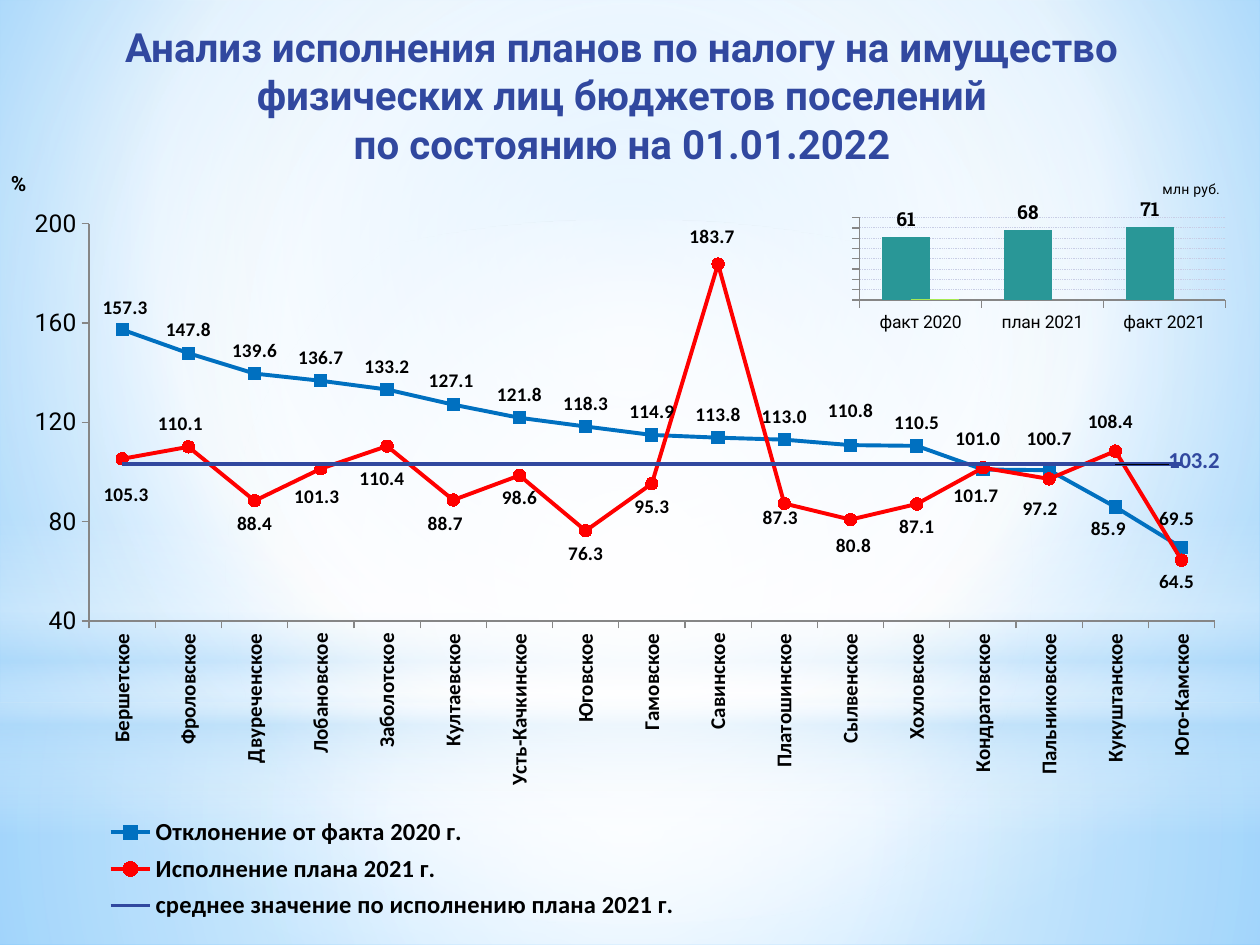
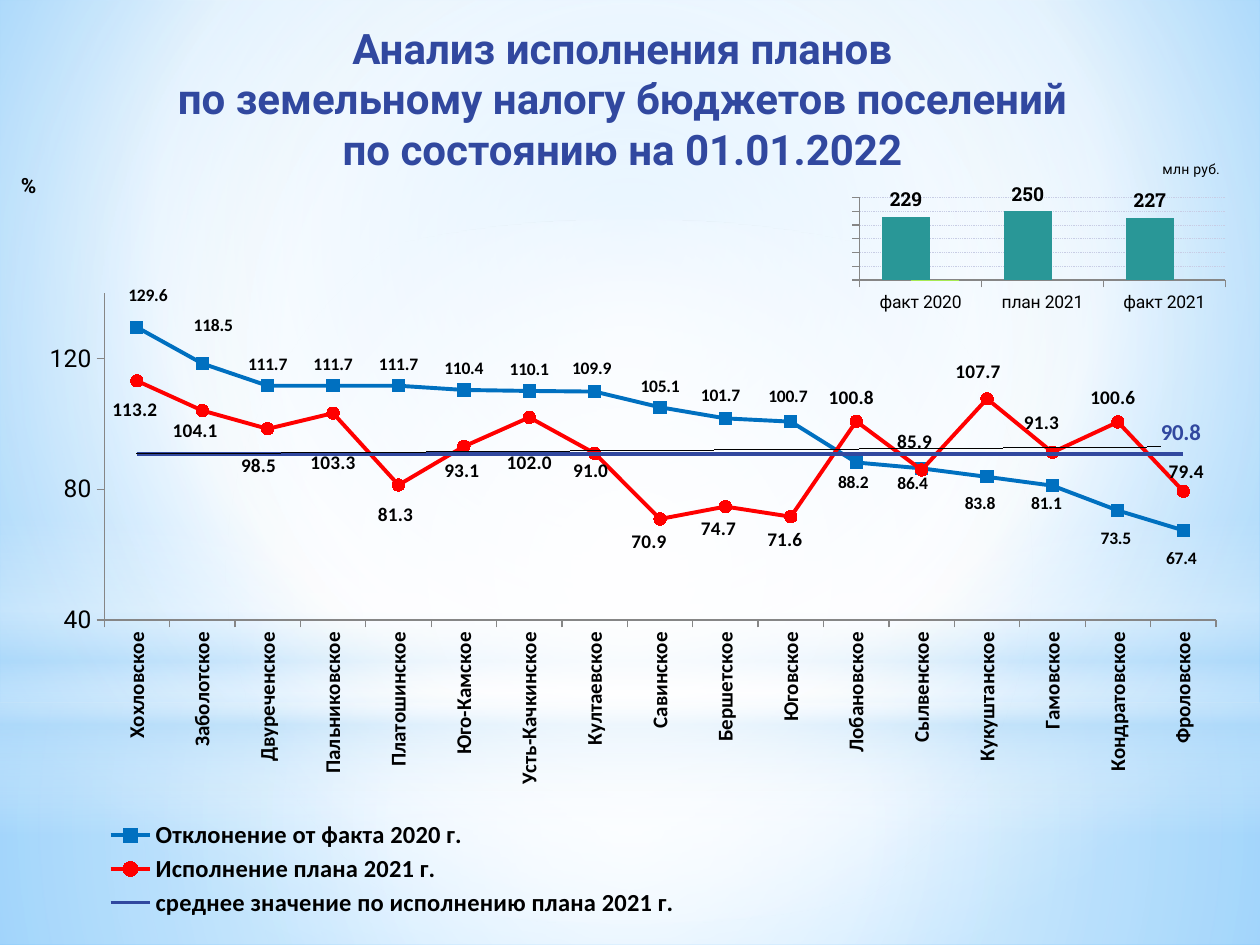
from pptx import Presentation
from pptx.chart.data import CategoryChartData
from pptx.dml.color import RGBColor
from pptx.enum.chart import XL_CHART_TYPE as CHART, XL_LABEL_POSITION as LABEL
from pptx.enum.chart import XL_LEGEND_POSITION as LEGEND, XL_MARKER_STYLE as MARKER
from pptx.enum.chart import XL_TICK_LABEL_POSITION as TICK_LABELS, XL_TICK_MARK as TICK
from pptx.enum.dml import MSO_LINE
from pptx.enum.shapes import MSO_SHAPE as SHAPE
from pptx.enum.text import MSO_ANCHOR, MSO_AUTO_SIZE, PP_ALIGN
from pptx.oxml import parse_xml
from pptx.oxml.ns import nsdecls, qn
from pptx.util import Pt

EMU_PER_PX = 914400 / 126
SLIDE_W, SLIDE_H = 1260, 945

BLACK = RGBColor(0x00, 0x00, 0x00)
WHITE = RGBColor(0xFF, 0xFF, 0xFF)
INDIGO = RGBColor(0x31, 0x48, 0x9F)
BLUE = RGBColor(0x00, 0x70, 0xC0)
RED = RGBColor(0xFF, 0x00, 0x00)
DARK_RED = RGBColor(0xC0, 0x00, 0x00)
TEAL = RGBColor(0x29, 0x97, 0x97)
LIME = RGBColor(0xA7, 0xEA, 0x52)
GRID = RGBColor(0xC8, 0xCD, 0xE5)
AXIS_GREY = RGBColor(0x86, 0x86, 0x86)
SKY = RGBColor(0xB4, 0xDC, 0xFA)
BG_INNER = RGBColor(0x9E, 0xD5, 0xFF)
BG_OUTER = RGBColor(0x5B, 0xB9, 0xFF)

HEAD_FONT, LABEL_FONT, FIGURE_FONT = "Roboto", "Calibri", "Roboto Slab"

DEVIATION = "Отклонение от факта 2020 г."
EXECUTION = "Исполнение плана 2021 г."
AVERAGE = "среднее значение по исполнению плана 2021 г."

# Label shifts are px from the default place: {point: (right, down)}
PROPERTY_TAX = dict(
    title="Анализ исполнения планов по налогу на имущество\vфизических лиц бюджетов поселений"
          "\vпо состоянию на 01.01.2022",
    title_size=23, title_height=123, frame=(0, 79, 1255, 866), scale_max=200,
    plot=(0.071, 0.167, 0.897, 0.459), percent_at=(7, 86), legend=(100, 732, 585, 116),
    settlements=["Бершетское", "Фроловское", "Двуреченское", "Лобановское", "Заболотское",
                 "Култаевское", "Усть-Качкинское", "Юговское", "Гамовское", "Савинское",
                 "Платошинское", "Сылвенское", "Хохловское", "Кондратовское",
                 "Пальниковское", "Кукуштанское", "Юго-Камское"],
    deviation=[157.3, 147.8, 139.6, 136.7, 133.2, 127.1, 121.8, 118.3, 114.9, 113.8, 113,
               110.8, 110.5, 101, 100.7, 85.9, 69.5],
    execution=[105.3, 110.1, 88.4, 101.3, 110.4, 88.7, 98.6, 76.3, 95.3, 183.7, 87.3,
               80.8, 87.1, 101.7, 97.2, 108.4, 64.5],
    average=103.2, deviation_size=11, execution_marker=RED,
    deviation_shifts={0: (3, 1), 5: (-2, -1), 11: (0, -11), 13: (-5, -8), 14: (0, -8),
                      15: (-7, 45), 16: (-5, -6)},
    execution_shifts={0: (4, 13), 1: (-8, -46), 3: (-4, 5), 4: (-5, 10), 5: (-8, 1),
                      9: (-6, -50), 10: (-4, -8), 11: (3, 3), 13: (-7, 5), 14: (-9, 7),
                      15: (-5, -52), 16: (-5, -1)},
    average_shifts={15: (48, -3)},
    totals=[61, 68, 71], totals_top=155, totals_max=80, totals_step=10)

LAND_TAX = dict(
    title="Анализ исполнения планов\vпо земельному налогу бюджетов поселений"
          "\vпо состоянию на 01.01.2022",
    title_size=24, title_height=169, frame=(5, 111, 1255, 829), scale_max=140,
    plot=(0.079, 0.22, 0.886, 0.394), percent_at=(12, 56), legend=(95, 706, 585, 104),
    settlements=["Хохловское", "Заболотское", "Двуреченское", "Пальниковское",
                 "Платошинское", "Юго-Камское", "Усть-Качкинское", "Култаевское",
                 "Савинское", "Бершетское", "Юговское", "Лобановское", "Сылвенское",
                 "Кукуштанское", "Гамовское", "Кондратовское", "Фроловское"],
    deviation=[129.6, 118.5, 111.7, 111.7, 111.7, 110.4, 110.1, 109.9, 105.1, 101.7, 100.7,
               88.2, 86.4, 83.8, 81.1, 73.5, 67.4],
    execution=[113.2, 104.1, 98.5, 103.3, 81.3, 93.1, 102, 91, 70.9, 74.7, 71.6, 100.8,
               85.9, 107.7, 91.3, 100.6, 79.4],
    average=90.8, deviation_size=10, execution_marker=DARK_RED,
    deviation_shifts={0: (11, -11), 1: (11, -17), 7: (-3, -2), 9: (-5, -2), 10: (-3, -4),
                      11: (-3, 41), 12: (-9, 36), 13: (-7, 48), 14: (-6, 39),
                      15: (-2, 49), 16: (-2, 49)},
    execution_shifts={0: (-2, 6), 1: (-7, -3), 2: (-9, 14), 3: (0, 27), 4: (-3, 7),
                      5: (-2, 2), 6: (0, 23), 7: (-4, -5), 8: (-11, 0), 9: (-7, -1),
                      10: (-6, 0), 11: (-5, -46), 12: (-7, -51), 13: (-9, -50),
                      14: (-11, -52), 15: (-5, -47), 16: (3, -42)},
    average_shifts={0: (1019, -21)},
    totals=[229, 250, 227], totals_top=135, totals_max=300, totals_step=50)


def px(length):
    return round(length * EMU_PER_PX)


def box(*lengths):
    return [px(length) for length in lengths]


# Text
def format_font(font, size, name=HEAD_FONT, bold=False, color=BLACK):
    font.size, font.name, font.bold = Pt(size), name, bold
    font.color.rgb = color


def write(frame, text, align=PP_ALIGN.CENTER, **font):
    frame.text = text
    paragraph = frame.paragraphs[0]
    paragraph.alignment = align
    for run in paragraph.runs:
        format_font(run.font, **font)


# Shared background
def gradient(stops, focus=None):
    """Stops are (position %, colour, opacity %); focus makes the gradient circular."""
    marks = "".join(
        f'<a:gs pos="{at * 1000}"><a:srgbClr val="{color}">'
        f'<a:alpha val="{opacity * 1000}"/></a:srgbClr></a:gs>' for at, color, opacity in stops)
    if focus:
        left, top, right, bottom = (side * 1000 for side in focus)
        course = (f'<a:path path="circle"><a:fillToRect l="{left}" t="{top}" '
                  f'r="{right}" b="{bottom}"/></a:path>')
    else:
        course = '<a:lin ang="5400000" scaled="0"/>'
    return parse_xml(f'<a:gradFill {nsdecls("a")} rotWithShape="1"><a:gsLst>{marks}</a:gsLst>'
                     f'{course}</a:gradFill>')


def swap_fill(fill, holder, new_fill):
    fill.solid()
    solid = holder.find(".//" + qn("a:solidFill"))
    solid.getparent().replace(solid, new_fill)


def paint_master(master, slide):
    backdrop = gradient([(0, BG_INNER, 100), (60, WHITE, 100), (100, BG_OUTER, 100)],
                        (20, 10, 20, 60))
    swap_fill(master.background.fill, master.element, backdrop)
    centre = (50, 50, 50, 50)
    glows = [
        (SHAPE.RECTANGLE, (0, 703, SLIDE_W, 242), centre,
         [(0, WHITE, 91), (37, WHITE, 76), (100, SKY, 79)]),
        (SHAPE.RECTANGLE, (0, 0, SLIDE_W, 703), centre,
         [(0, WHITE, 89), (48, WHITE, 62), (100, SKY, 79)]),
        (SHAPE.RECTANGLE, (0, 519, SLIDE_W, 315), None,
         [(0, WHITE, 0), (29, WHITE, 30), (45, SKY, 40), (55, WHITE, 26), (65, SKY, 60),
          (100, WHITE, 0)]),
        (SHAPE.OVAL, (0, 220, SLIDE_W, 703), centre, [(0, WHITE, 100), (56, WHITE, 0)]),
    ]
    tree = master.element.cSld.spTree
    for order, (preset, place, focus, stops) in enumerate(glows):
        glow = slide.shapes.add_shape(preset, *box(*place))
        glow.shadow.inherit = False
        glow.line.fill.background()
        swap_fill(glow.fill, glow.element, gradient(stops, focus))
        glow.element.nvSpPr.cNvPr.set("id", str(101 + order))
        tree.insert(2 + order, glow.element)


# Chart parts
def set_layout(parent, after, x, y, w=None, h=None, kind="edge", target=""):
    old = parent.find(qn("c:layout"))
    if old is not None:
        parent.remove(old)
    modes = '<c:xMode val="edge"/><c:yMode val="edge"/>' if kind == "edge" else ""
    size = f'<c:w val="{w:.4f}"/><c:h val="{h:.4f}"/>' if w else ""
    layout = parse_xml(f'<c:layout {nsdecls("c")}><c:manualLayout>{target}{modes}'
                       f'<c:x val="{x:.4f}"/><c:y val="{y:.4f}"/>{size}'
                       f'</c:manualLayout></c:layout>')
    if after:
        parent.find(qn(after)).addnext(layout)
    else:
        parent.insert(0, layout)


def add_chart(slide, kind, frame, categories, series, plot):
    data = CategoryChartData()
    data.categories = categories
    for name, values in series:
        data.add_series(name, values)
    chart = slide.shapes.add_chart(kind, *box(*frame), data).chart
    chart.has_title = chart.has_legend = False
    format_font(chart.font, 18)
    chart.plots[0].vary_by_categories = False
    set_layout(chart.element.find(".//" + qn("c:plotArea")), None, *plot,
               target='<c:layoutTarget val="inner"/>')
    return chart


def format_axes(chart, frame, maximum, step, minimum, unit, unit_at, unit_font):
    axis = chart.value_axis
    axis.minimum_scale, axis.maximum_scale, axis.major_unit = minimum, maximum, step
    axis.has_major_gridlines = False
    axis.tick_labels.number_format = "#,##0"
    axis.tick_labels.number_format_is_linked = False
    for each in (axis, chart.category_axis):
        each.major_tick_mark, each.minor_tick_mark = TICK.OUTSIDE, TICK.NONE
        each.format.line.color.rgb = AXIS_GREY
        each.format.line.width = Pt(0.75)
    write(axis.axis_title.text_frame, unit, **unit_font)
    title = axis.axis_title.element
    title.find(".//" + qn("a:bodyPr")).set("rot", "0")
    set_layout(title, "c:tx", unit_at[0] / frame[2], unit_at[1] / frame[3])


def label_points(series, frame, position, shifts, show_all, size, color=BLACK):
    font = dict(size=size, name=LABEL_FONT, bold=True, color=color)
    labels = series.data_labels
    labels.show_value = show_all
    labels.number_format, labels.number_format_is_linked = "#,##0.0", False
    labels.position = position
    format_font(labels.font, **font)
    for index, (right, down) in shifts.items():
        label = series.points[index].data_label
        label.position = position
        format_font(label.font, **font)
        element = series._element.xpath(f'c:dLbls/c:dLbl[c:idx/@val="{index}"]')[0]
        set_layout(element, "c:idx", right / frame[2], down / frame[3], kind="factor")
        element.find(qn("c:layout")).addnext(parse_xml(
            f'<c:numFmt {nsdecls("c")} formatCode="#,##0.0" sourceLinked="0"/>'))
    # Leader lines only where single points carry the label
    leader = "0" if show_all else "1"
    for flag in series._element.find(qn("c:dLbls")).findall(qn("c:showLeaderLines")):
        flag.set("val", leader)


def style_line(series, color, marker, marker_color=None):
    series.smooth = False
    series.format.line.color.rgb = color
    series.format.line.width = Pt(2.25)
    series.marker.style = marker
    if marker_color is not None:
        series.marker.size = 7
        series.marker.format.fill.solid()
        series.marker.format.fill.fore_color.rgb = marker_color
        series.marker.format.line.color.rgb = color


# Slide parts
def add_title(slide, tax):
    title = slide.shapes.title
    title.left, title.top, title.width, title.height = box(0, 16, 1245, tax["title_height"])
    frame = title.text_frame
    write(frame, tax["title"], size=tax["title_size"], bold=True, color=INDIGO)
    frame.word_wrap, frame.auto_size = True, MSO_AUTO_SIZE.NONE
    frame.vertical_anchor = MSO_ANCHOR.TOP


def add_settlement_chart(slide, tax):
    frame, settlements = tax["frame"], tax["settlements"]
    chart = add_chart(slide, CHART.LINE_MARKERS, frame, settlements, [
        (DEVIATION, tax["deviation"]), (EXECUTION, tax["execution"]),
        (AVERAGE, [tax["average"]] * len(settlements))], tax["plot"])
    format_axes(chart, frame, tax["scale_max"], 40, 40, "%", tax["percent_at"],
                dict(size=12, bold=True))
    format_font(chart.value_axis.tick_labels.font, 14)
    names = chart.category_axis
    format_font(names.tick_labels.font, 12, LABEL_FONT, True)
    names._element.find(".//" + qn("a:bodyPr")).set("rot", "-5400000")

    deviation, execution, average = chart.plots[0].series
    style_line(deviation, BLUE, MARKER.SQUARE, BLUE)
    style_line(execution, RED, MARKER.CIRCLE, tax["execution_marker"])
    style_line(average, INDIGO, MARKER.NONE)
    label_points(deviation, frame, LABEL.ABOVE, tax["deviation_shifts"], True,
                 tax["deviation_size"])
    label_points(execution, frame, LABEL.BELOW, tax["execution_shifts"], True, 11)
    label_points(average, frame, LABEL.RIGHT, tax["average_shifts"], False, 13, INDIGO)

    chart.has_legend = True
    chart.legend.position = LEGEND.BOTTOM
    chart.legend.include_in_layout = False
    format_font(chart.legend.font, 14, LABEL_FONT, True)
    left, top, width, height = tax["legend"]
    set_layout(chart.element.find(".//" + qn("c:legend")), "c:legendPos", left / frame[2],
               top / frame[3], width / frame[2], height / frame[3])


def add_totals_chart(slide, tax):
    frame = (848, tax["totals_top"], 387, 208)
    chart = add_chart(slide, CHART.COLUMN_CLUSTERED, frame,
                      ["факт 2020", "план 2021", "факт 2021"],
                      [("Series 1", tax["totals"]), ("Series 2", [1, None, None])],
                      (0.03, 0.301, 0.945, 0.397))
    format_axes(chart, frame, tax["totals_max"], tax["totals_step"], 0, "млн руб.",
                (312, 22), dict(size=8))
    axis = chart.value_axis
    axis.tick_label_position = TICK_LABELS.NONE
    axis.has_major_gridlines = True
    grid = axis.major_gridlines.format.line
    grid.color.rgb, grid.width, grid.dash_style = GRID, Pt(0.5), MSO_LINE.ROUND_DOT
    format_font(chart.category_axis.tick_labels.font, 10)
    columns = chart.plots[0]
    columns.gap_width, columns.overlap = 94, 40
    for series, color in zip(columns.series, (TEAL, LIME)):
        series.format.fill.solid()
        series.format.fill.fore_color.rgb = color
    labels = columns.series[0].data_labels
    labels.show_value, labels.position = True, LABEL.OUTSIDE_END
    labels.number_format, labels.number_format_is_linked = "#,##0", False
    format_font(labels.font, 11, FIGURE_FONT, True)


def main():
    deck = Presentation()
    deck.slide_width, deck.slide_height = box(SLIDE_W, SLIDE_H)
    for tax in (PROPERTY_TAX, LAND_TAX):
        slide = deck.slides.add_slide(deck.slide_layouts[5])
        if tax is PROPERTY_TAX:
            paint_master(deck.slide_master, slide)
        add_title(slide, tax)
        add_settlement_chart(slide, tax)
        add_totals_chart(slide, tax)
    deck.save("out.pptx")


if __name__ == "__main__":
    main()
